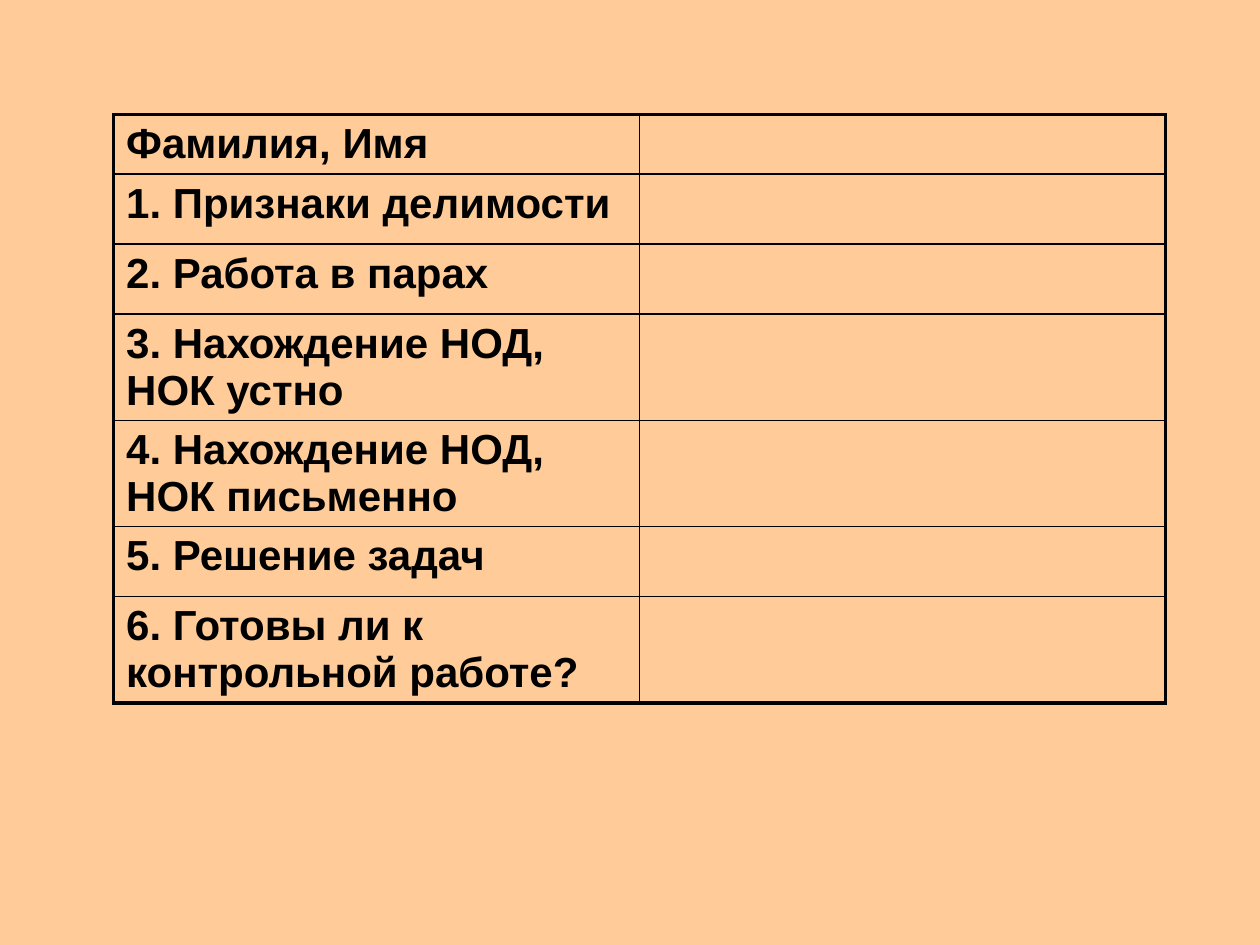
from dataclasses import dataclass

from lxml.etree import SubElement
from pptx import Presentation
from pptx.dml.color import RGBColor
from pptx.oxml.ns import qn
from pptx.table import _Cell as Cell
from pptx.util import Cm, Pt

PAPER, INK = "FFCC99", "000000"
THIN, THICK = Pt(1), Pt(2.25)
COLUMN_WIDTH = Cm(10.6)


@dataclass
class ChecklistRow:
    label: str
    height: float = 1.41


ROWS = [
    ChecklistRow("Фамилия, Имя", 0),
    ChecklistRow("1. Признаки делимости"),
    ChecklistRow("2. Работа в парах"),
    ChecklistRow("3. Нахождение НОД, НОК устно"),
    ChecklistRow("4. Нахождение НОД, НОК письменно"),
    ChecklistRow("5. Решение задач"),
    ChecklistRow("6. Готовы ли к контрольной работе?"),
]


def color(code: str) -> RGBColor:
    return RGBColor.from_string(code)


def draw_border(cell: Cell, side: str, width: int) -> None:
    properties = cell._tc.get_or_add_tcPr()
    line = SubElement(properties, qn(f"a:ln{side}"), w=str(width))
    fill = SubElement(line, qn("a:solidFill"))
    SubElement(fill, qn("a:srgbClr"), val=INK)


def style_cell(cell: Cell, row: int, column: int) -> None:
    outer_sides = {
        "L": column == 0,
        "R": column == 1,
        "T": row == 0,
        "B": row == len(ROWS) - 1,
    }
    for side, is_outer in outer_sides.items():
        draw_border(cell, side, THICK if is_outer else THIN)
    cell.fill.background()


def write_label(cell: Cell, label: str) -> None:
    para = cell.text_frame.paragraphs[0]
    spacing = SubElement(para._p.get_or_add_pPr(), qn("a:spcBef"))
    SubElement(spacing, qn("a:spcPct"), val="20000")
    span = para.add_run()
    span.text = label
    span.font.name = "Arial"
    span.font.size = Pt(24)
    span.font.bold = True
    span.font.color.rgb = color(INK)


def main() -> None:
    """Build the self-assessment checklist slide."""
    deck = Presentation()
    deck.slide_width, deck.slide_height = Cm(25.4), Cm(19.05)
    page = deck.slides.add_slide(deck.slide_layouts[6])
    page.background.fill.solid()
    page.background.fill.fore_color.rgb = color(PAPER)

    height = Cm(12.37)
    frame = page.shapes.add_table(
        len(ROWS), 2, Cm(2.29), Cm(2.31), 2 * COLUMN_WIDTH, height
    )
    table = frame.table
    table.first_row = table.horz_banding = False
    for row, item in enumerate(ROWS):
        table.rows[row].height = Cm(item.height)
        write_label(table.cell(row, 0), item.label)
        for column in range(2):
            style_cell(table.cell(row, column), row, column)
    frame.height = height
    deck.save("out.pptx")


if __name__ == "__main__":
    main()
